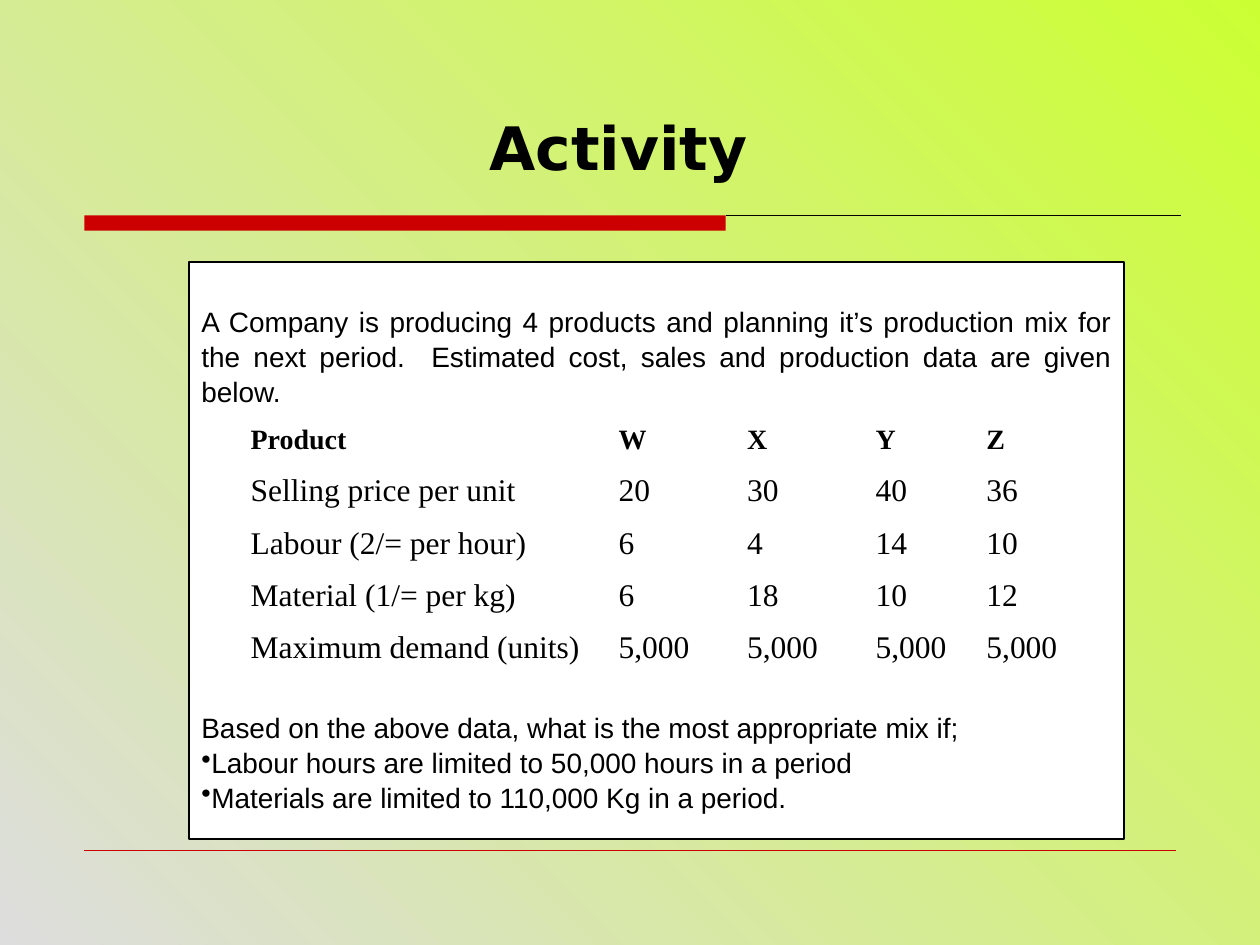
from lxml import etree
from pptx import Presentation
from pptx.dml.color import RGBColor
from pptx.enum import shapes, text
from pptx.oxml.ns import qn
from pptx.util import Emu, Inches, Pt

COLORS = {"red": "CC0000", "black": "000000", "white": "FFFFFF",
          "grey": "DDDDDD", "lime": "CCFF33"}

prs = Presentation()
prs.slide_width, prs.slide_height = Inches(10), Inches(7.5)
s = prs.slides.add_slide(prs.slide_layouts[6])
UNIT = prs.slide_width / 100  # grid of 100 columns by 75 rows


def grid(*cells):
    return [Emu(round(c * UNIT)) for c in cells]


def write(p, words, font="Arial", size=16, bold=False, align="JUSTIFY",
          spacing=1.0, before=0, bullet=False):
    p.alignment = getattr(text.PP_ALIGN, align)
    p.line_spacing, p.space_before = spacing, Pt(before)
    if bullet:
        pPr = p._p.get_or_add_pPr()
        pPr.set("marL", "0")
        pPr.set("indent", "0")
        etree.SubElement(pPr, qn("a:buChar")).set("char", "•")
    r = p.add_run()
    r.text = words
    r.font.name, r.font.size, r.font.bold = font, Pt(size), bold
    r.font.color.rgb = RGBColor.from_string(COLORS["black"])


# Background gradient, bottom left to top right
fill = s.background.fill
fill.gradient()
fill.gradient_angle = 45
for stop, (position, name) in zip(fill.gradient_stops, [(0, "grey"), (1, "lime")]):
    stop.position = position
    stop.color.rgb = RGBColor.from_string(COLORS[name])

# Red bar under the title
bar = s.shapes.add_shape(shapes.MSO_SHAPE.RECTANGLE, *grid(6.7, 17.1, 50.9, 1.2))
bar.shadow.inherit = False
bar.fill.solid()
bar.fill.fore_color.rgb = RGBColor.from_string(COLORS["red"])
bar.line.fill.background()

# Title rule and footer rule
for left, right, y, color, width in [(57.6, 93.7, 17.1, "black", 0.75),
                                     (6.7, 93.3, 67.5, "red", 0.25)]:
    rule = s.shapes.add_connector(shapes.MSO_CONNECTOR.STRAIGHT, *grid(left, y, right, y))
    rule.line.color.rgb = RGBColor.from_string(COLORS[color])
    rule.line.width = Pt(width)
    etree.SubElement(rule._element.spPr, qn("a:effectLst"))

# Title
tf = s.shapes.add_textbox(*grid(4.1, 8.8, 90, 5.6)).text_frame
tf.word_wrap = True
tf.margin_left = tf.margin_right = tf.margin_top = tf.margin_bottom = 0
write(tf.paragraphs[0], "Activity", font="DejaVu Sans", size=34.2, bold=True, align="CENTER")

# White card with the task; the gap before the question holds the table
card = s.shapes.add_shape(shapes.MSO_SHAPE.RECTANGLE, *grid(15, 20.8, 74.2, 45.8))
card.shadow.inherit = False
card.fill.solid()
card.fill.fore_color.rgb = RGBColor.from_string(COLORS["white"])
card.line.color.rgb = RGBColor.from_string(COLORS["black"])
card.line.width = Pt(0.75)
tf = card.text_frame
tf.word_wrap = True
tf.vertical_anchor = text.MSO_ANCHOR.TOP
tf.margin_top = grid(3.3)[0]
task = [
    ("A Company is producing 4 products and planning it’s production mix for the "
     "next period.  Estimated cost, sales and production data are given below.", {}),
    ("Based on the above data, what is the most appropriate mix if;", {"before": 172}),
    ("Labour hours are limited to 50,000 hours in a period", {"bullet": True}),
    ("Materials are limited to 110,000 Kg in a period.", {"bullet": True}),
]
for i, (words, fmt) in enumerate(task):
    p = tf.add_paragraph() if i else tf.paragraphs[0]
    write(p, words, spacing=1.04, **fmt)

# Product data table
rows = [
    ("Product", "W", "X", "Y", "Z"),
    ("Selling price per unit", "20", "30", "40", "36"),
    ("Labour (2/= per hour)", "6", "4", "14", "10"),
    ("Material (1/= per kg)", "6", "18", "10", "12"),
    ("Maximum demand (units)", "5,000", "5,000", "5,000", "5,000"),
]
table = s.shapes.add_table(len(rows), len(rows[0]), *grid(19.2, 32.9, 66.6, 20.6)).table
table.first_row = table.horz_banding = False
for column, width in zip(table.columns, grid(29.2, 10.2, 10.2, 8.8, 8.2)):
    column.width = width
for i, values in enumerate(rows):
    table.rows[i].height = grid(4.15 if i else 4)[0]
    for j, value in enumerate(values):
        cell = table.cell(i, j)
        cell.fill.background()
        cell.vertical_anchor = text.MSO_ANCHOR.MIDDLE
        cell.margin_left = cell.margin_right = grid(0.7)[0]
        cell.margin_top = cell.margin_bottom = 0
        write(cell.text_frame.paragraphs[0], value, font="Times New Roman",
              size=18 if i else 16, bold=i == 0)

prs.save("out.pptx")
